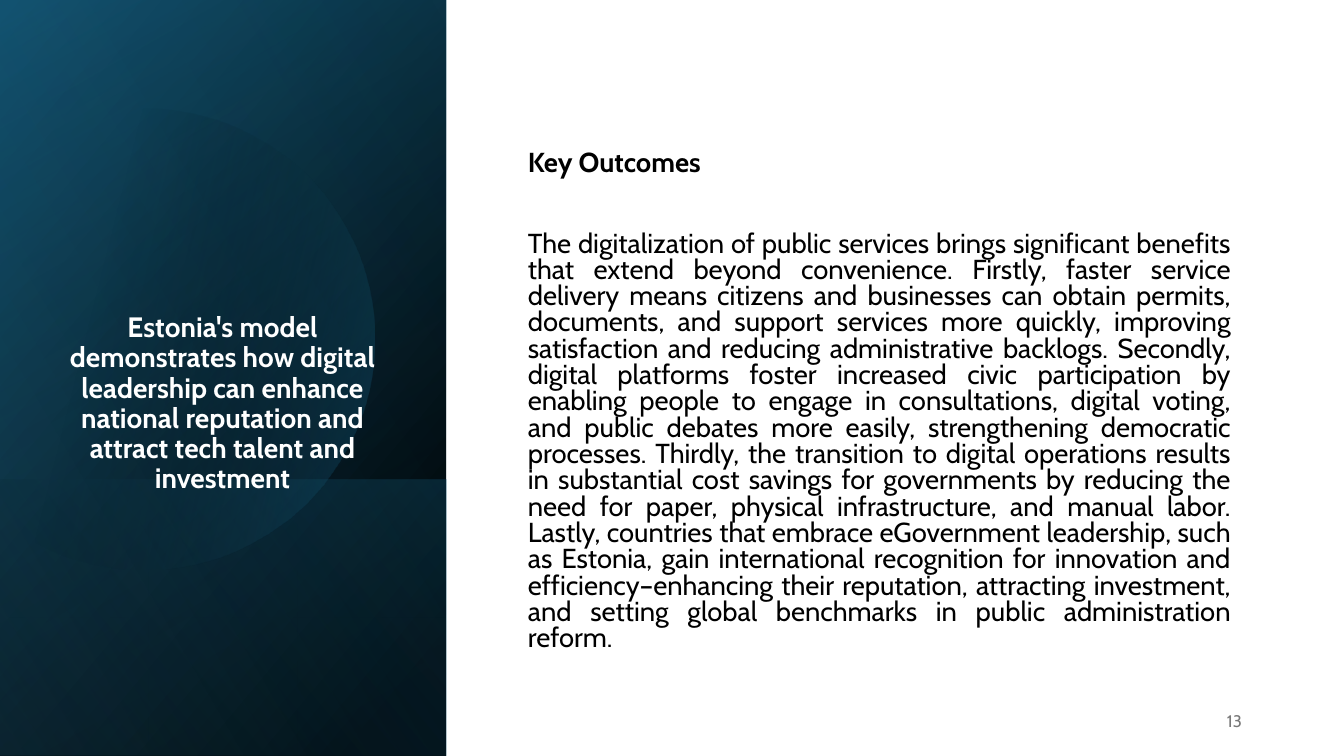
from math import cos, radians, sin

from lxml import etree
from pptx import Presentation
from pptx.dml.color import RGBColor
from pptx.enum.shapes import MSO_SHAPE as Shape
from pptx.enum.text import MSO_ANCHOR as Anchor, PP_ALIGN as Align
from pptx.oxml.ns import qn
from pptx.util import Pt

PX = 914400 / 100.8
WIDTH, HEIGHT = 1344, 756
PANEL_WIDTH = 446
FONT = "Cabin"

CLAIM = ["Estonia's model demonstrates how digital leadership can enhance "
         "national reputation and attract tech talent and investment"]
OUTCOMES = [
    "The digitalization of public services brings significant benefits that extend "
    "beyond convenience. ",
    "Firstly, faster service delivery means citizens and businesses can obtain permits, "
    "documents, and support services more quickly, improving satisfaction and reducing "
    "administrative backlogs. ",
    "Secondly, digital platforms foster increased civic participation by enabling people "
    "to engage in consultations, digital voting, and public debates more easily, "
    "strengthening democratic processes. ",
    "Thirdly, the transition to digital operations results in substantial cost savings "
    "for governments by reducing the need for paper, physical infrastructure, and manual "
    "labor. ",
    "Lastly, countries that embrace eGovernment leadership, such as Estonia, gain "
    "international recognition for innovation and efficiency–enhancing their reputation, "
    "attracting investment, and setting global benchmarks in public administration reform.",
]


def emu(px):
    return round(px * PX)


def color(code):
    return RGBColor.from_string(code)


def add_rect(slide, left, top, width, height):
    rect = slide.shapes.add_shape(
        Shape.RECTANGLE, emu(left), emu(top), emu(width), emu(height))
    rect.shadow.inherit = False
    rect.line.fill.background()
    return rect


def fill_gradient(shape, angle, stops):
    """Fill with (position %, colour, opacity %) stops, angle clockwise."""
    shape.fill.gradient()
    gradient = shape.element.spPr.find(qn("a:gradFill"))
    for child in list(gradient):
        gradient.remove(child)
    stop_list = etree.SubElement(gradient, qn("a:gsLst"))
    for position, code, opacity in stops:
        stop = etree.SubElement(stop_list, qn("a:gs"), pos=str(position * 1000))
        tint = etree.SubElement(stop, qn("a:srgbClr"), val=code)
        if opacity < 100:
            etree.SubElement(tint, qn("a:alpha"), val=str(opacity * 1000))
    etree.SubElement(gradient, qn("a:lin"), ang=str(angle * 60000), scaled="0")


def add_panel(slide, top, angle, stops):
    panel = add_rect(slide, 0, top, PANEL_WIDTH, HEIGHT - top)
    fill_gradient(panel, angle, stops)


def add_disc(slide, center_x, center_y, radius, half_sweep, angle, stops):
    """Draw a disc cut straight on its left side."""
    points = [(center_x + radius * cos(radians(turn)),
               center_y + radius * sin(radians(turn)))
              for turn in range(-half_sweep, half_sweep + 1, 3)]
    builder = slide.shapes.build_freeform(*points[0], scale=PX)
    builder.add_line_segments(points[1:], close=True)
    disc = builder.convert_to_shape()
    disc.shadow.inherit = False
    disc.line.fill.background()
    fill_gradient(disc, angle, stops)


def add_text_frame(slide, left, top, width, height, anchor):
    box = slide.shapes.add_textbox(emu(left), emu(top), emu(width), emu(height))
    frame = box.text_frame
    frame.word_wrap = True
    frame.vertical_anchor = anchor
    return frame


def write(para, texts, size, code, align, spacing=1.0, before=0, bold=False):
    """Set the paragraph's layout and add one run per text."""
    para.alignment = align
    para.line_spacing = spacing
    para.space_before = Pt(before)
    for text in texts:
        span = para.add_run()
        span.text = text
        span.font.name = FONT
        span.font.size = Pt(size)
        span.font.bold = bold
        span.font.color.rgb = color(code)


def main():
    deck = Presentation()
    deck.slide_width, deck.slide_height = emu(WIDTH), emu(HEIGHT)
    page = deck.slides.add_slide(deck.slide_layouts[6])

    # White ground
    ground = add_rect(page, 0, 0, WIDTH, HEIGHT)
    ground.fill.solid()
    ground.fill.fore_color.rgb = color("FFFFFF")

    # Layered gradients of the left panel
    add_panel(page, 0, 220, [(8, "000000", 100), (100, "104862", 100)])
    add_panel(page, 0, 240, [(0, "000000", 0), (99, "156082", 46)])
    add_panel(page, 480, 140, [(2, "156082", 29), (100, "000000", 30)])
    add_disc(page, 144, 339, 230, 129, 14,
             [(29, "000000", 0), (100, "156082", 43)])
    add_panel(page, 0, 150, [(0, "000000", 0), (99, "46B1E1", 11)])

    # Claim on the panel
    claim = add_text_frame(page, 46, 338, 353, 162, Anchor.BOTTOM)
    write(claim.paragraphs[0], CLAIM, 20, "FFFFFF", Align.CENTER, 0.9, bold=True)

    # Key outcomes
    body = add_text_frame(page, 518, 96, 723, 612, Anchor.MIDDLE)
    write(body.paragraphs[0], ["Key Outcomes"], 19.6, "000000", Align.JUSTIFY,
          0.8, before=10, bold=True)
    write(body.add_paragraph(), OUTCOMES, 19.6, "000000", Align.JUSTIFY,
          0.8, before=39)

    # Page number
    number = add_text_frame(page, 950, 701, 302, 40, Anchor.MIDDLE)
    write(number.paragraphs[0], ["13"], 12, "797979", Align.RIGHT)

    deck.save("out.pptx")


if __name__ == "__main__":
    main()
